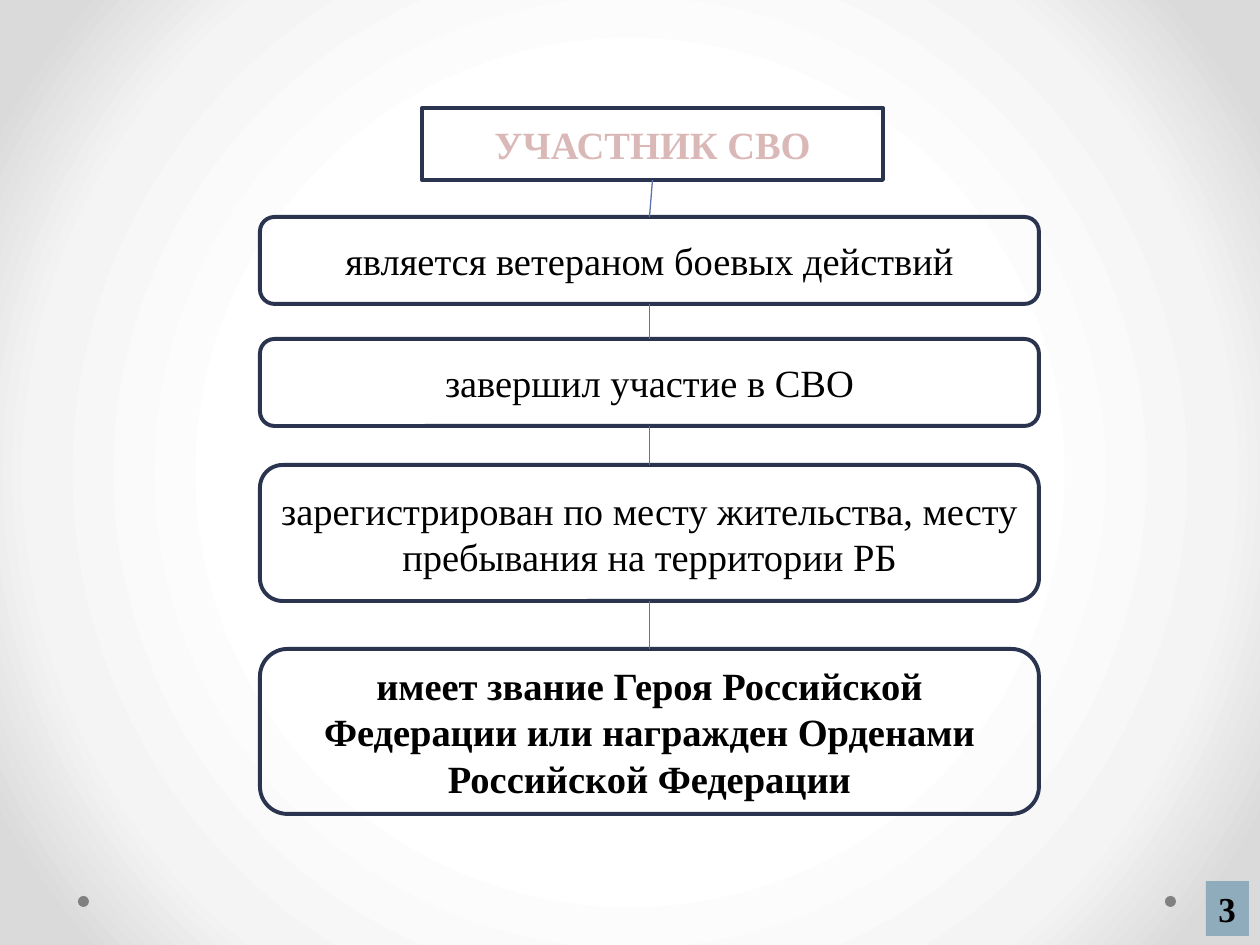
"""Builds the slide that lists who counts as a participant, as a chain of boxes."""
from dataclasses import dataclass
from itertools import pairwise

from lxml import etree
from pptx import Presentation, util as u
from pptx.dml.color import RGBColor
from pptx.enum import shapes, text
from pptx.oxml import ns

SCALE = u.Inches(1) / 126


@dataclass(frozen=True)
class Theme:
    font: str = "Times New Roman"
    body: int = 22
    page: int = 20
    edge: float = 2.25
    link: float = 0.75
    rim: float = 1.75
    ink: str = "000000"
    frame: str = "2A344F"
    wire: str = "5C72B2"
    head: str = "DAB8B8"
    glow: str = "9C5252"
    tile: str = "8FACBC"
    dot: str = "808080"
    stops: tuple = ((50, "FFFFFF"), (76, "F4F4F4"), (92, "DADADA"))


@dataclass(frozen=True)
class Box:
    words: str
    top: int
    high: int
    left: int = 260
    wide: int = 779
    bold: bool = False


THEME = Theme()
TITLE = Box("УЧАСТНИК СВО", 108, 72, 422, 461, True)
STEPS = (
    Box("является ветераном боевых действий", 217, 87),
    Box("завершил участие в СВО", 339, 87),
    Box("зарегистрирован по месту жительства, месту пребывания на территории РБ", 465, 136),
    Box("имеет звание Героя Российской Федерации или награжден Орденами "
        "Российской Федерации", 649, 165, bold=True),
)
PAGE = Box("3", 881, 55, 1206, 43, True)
DOTS = (Box("", 896, 11, 1165, 11), Box("", 896, 11, 78, 11))


def px(count: int) -> int:
    return round(count * SCALE)


def rgb(code: str) -> RGBColor:
    return RGBColor.from_string(code)


def sub(node, tag: str, **attrs):
    return etree.SubElement(node, ns.qn(tag), attrs)


def paint(slide) -> None:
    fill = slide.background.fill
    fill.gradient()
    grad = slide.element.find(".//" + ns.qn("a:gradFill"))
    for child in list(grad):
        grad.remove(child)
    stops = sub(grad, "a:gsLst")
    for pos, code in THEME.stops:
        sub(sub(stops, "a:gs", pos=str(pos * 1000)), "a:srgbClr", val=code)
    ring = sub(grad, "a:path", path="circle")
    sub(ring, "a:fillToRect", l="50000", t="50000", r="50000", b="50000")


def place(shape, box: Box) -> None:
    shape.left, shape.top = px(box.left), px(box.top)
    shape.width, shape.height = px(box.wide), px(box.high)


def write(shape, box: Box, size: int, code: str, align, anchor):
    frame = shape.text_frame
    frame.word_wrap = True
    frame.auto_size = text.MSO_AUTO_SIZE.NONE
    frame.vertical_anchor = anchor
    para = frame.paragraphs[0]
    para.alignment = align
    run = para.add_run()
    run.text = box.words
    font = run.font
    font.name, font.size, font.bold = THEME.font, u.Pt(size), box.bold
    font.color.rgb = rgb(code)
    return run


def trim(shape, box: Box, code: str):
    shape.fill.background()
    shape.line.color.rgb = rgb(THEME.frame)
    shape.line.width = u.Pt(THEME.edge)
    return write(shape, box, THEME.body, code,
                 text.PP_ALIGN.CENTER, text.MSO_ANCHOR.MIDDLE)


def solid(slide, kind, box: Box, code: str):
    shape = slide.shapes.add_shape(kind, 0, 0, 0, 0)
    place(shape, box)
    shape.shadow.inherit = False
    shape.fill.solid()
    shape.fill.fore_color.rgb = rgb(code)
    shape.line.fill.background()
    return shape


def add_title(slide, box: Box):
    shape = slide.shapes.title
    place(shape, box)
    geom = sub(shape.element.spPr, "a:prstGeom", prst="roundRect")
    sub(geom, "a:avLst")
    run = trim(shape, box, THEME.head)
    rim = etree.Element(ns.qn("a:ln"), w=str(u.Pt(THEME.rim)))
    sub(sub(rim, "a:solidFill"), "a:srgbClr", val=THEME.glow)
    run.font._element.insert(0, rim)
    return shape


def add_step(slide, box: Box):
    shape = slide.shapes.add_shape(shapes.MSO_SHAPE.ROUNDED_RECTANGLE, 0, 0, 0, 0)
    place(shape, box)
    shape.shadow.inherit = False
    trim(shape, box, THEME.ink)
    return shape


def join(slide, upper, lower) -> None:
    line = slide.shapes.add_connector(shapes.MSO_CONNECTOR.STRAIGHT, 0, 0, 0, 0)
    line.begin_connect(upper, 2)
    line.end_connect(lower, 0)
    line.line.color.rgb = rgb(THEME.wire)
    line.line.width = u.Pt(THEME.link)
    sub(line.element.spPr, "a:effectLst")


def main() -> None:
    deck = Presentation()
    deck.slide_width, deck.slide_height = px(1260), px(945)
    slide = deck.slides.add_slide(deck.slide_layouts[5])
    paint(slide)
    for dot in DOTS:
        solid(slide, shapes.MSO_SHAPE.OVAL, dot, THEME.dot)
    chain = [add_title(slide, TITLE)] + [add_step(slide, step) for step in STEPS]
    for upper, lower in pairwise(chain):
        join(slide, upper, lower)
    tile = solid(slide, shapes.MSO_SHAPE.RECTANGLE, PAGE, THEME.tile)
    write(tile, PAGE, THEME.page, THEME.ink, text.PP_ALIGN.LEFT, text.MSO_ANCHOR.TOP)
    tile.text_frame.word_wrap = False
    deck.save("out.pptx")


if __name__ == "__main__":
    main()
